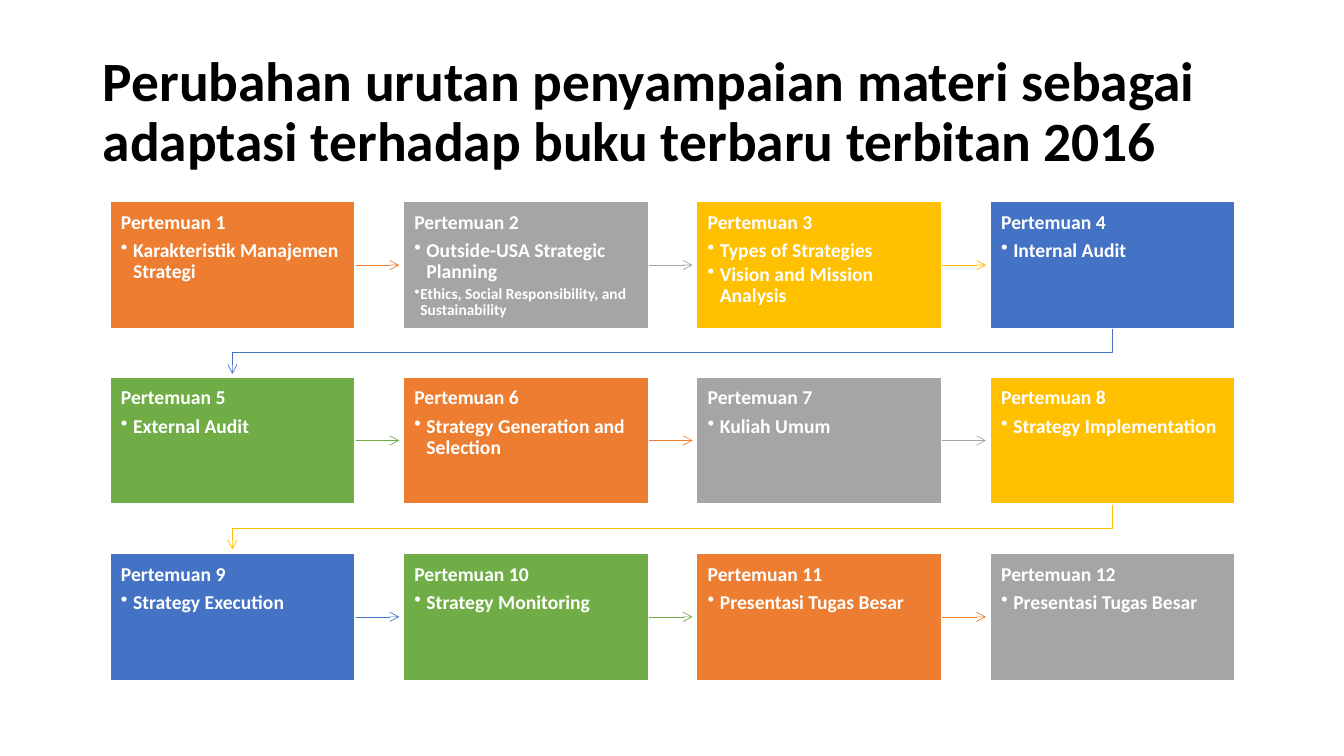
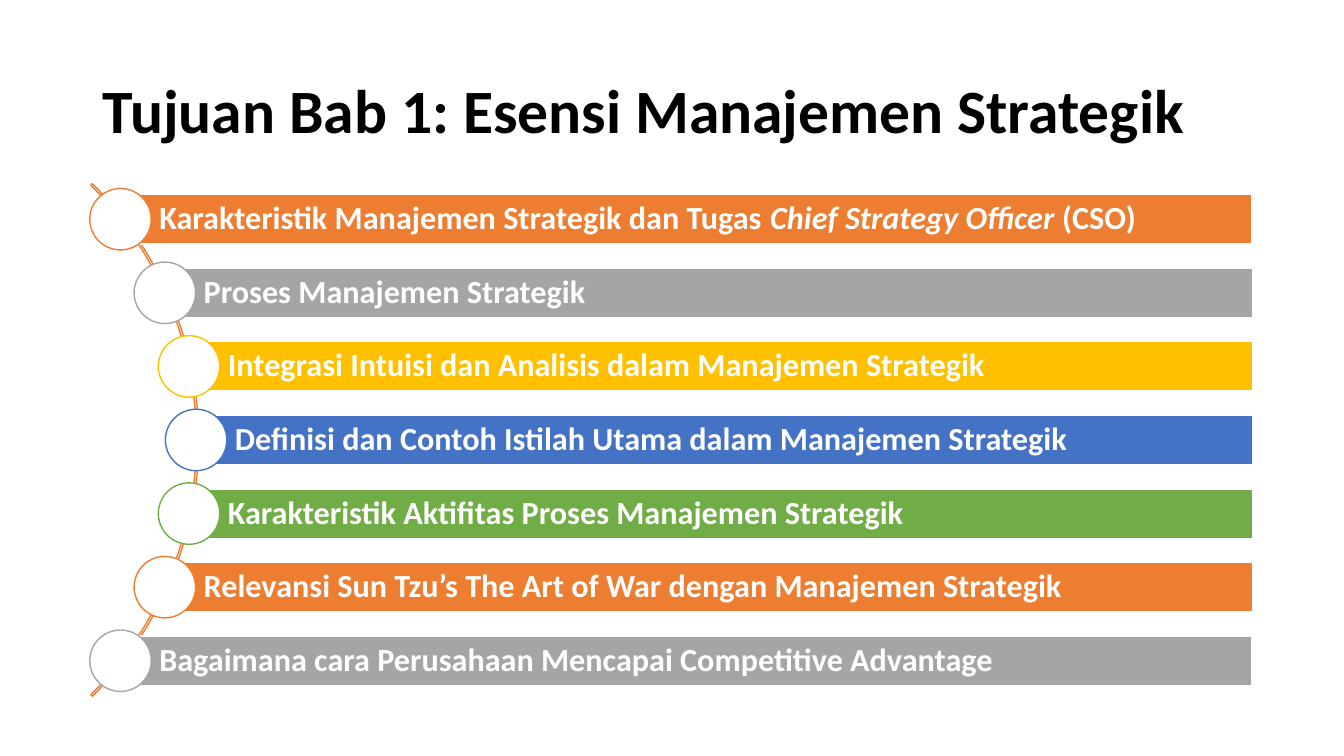
import dataclasses
import functools
import itertools
import math
import typing

import lxml.etree
import pptx
import pptx.dml.color
import pptx.enum.shapes
import pptx.enum.text
import pptx.oxml.ns
import pptx.util

EMU_PER_PX = 9144
FONT = "Calibri"
COLORS = {
    "orange": "ED7D31",
    "gray": "A5A5A5",
    "gold": "FFC000",
    "blue": "4472C4",
    "green": "70AD47",
    "white": "FFFFFF",
    "black": "000000",
}
ACCENTS = ("orange", "gray", "gold", "blue", "green")
SHAPE = pptx.enum.shapes.MSO_SHAPE
ANCHOR = pptx.enum.text.MSO_ANCHOR

GRID_COLUMNS = 4
GRID_LEFT, GRID_TOP, GRID_BOTTOM = 109, 200, 675
CARD_WIDTH, CARD_HEIGHT, CARD_PITCH = 243, 126, 291
ARROW_LENGTH, ELBOW_DROP = 45, 24

ARC_LEFT, ARC_TOP, ARC_SIZE = -522, 77, 719
ARC_ADJUSTMENTS = (189, 27, 0.003)
TRACK_RADIUS = 357
BAR_TOP, BAR_HEIGHT, BAR_PITCH, BAR_RIGHT = 193, 49, 73, 1242
DOT_SIZE = 61


class Area(typing.NamedTuple):
    left: int
    top: int
    width: int
    height: int


class Bullet(typing.NamedTuple):
    text: str
    size: float = 14
    indent: int = 12


class Span(typing.NamedTuple):
    text: str
    italic: bool = False


@dataclasses.dataclass(frozen=True)
class Meeting:
    bullets: tuple[Bullet, ...]


@dataclasses.dataclass(frozen=True)
class Goal:
    spans: tuple[Span, ...]


TITLE_AREA = Area(92, 40, 1150, 145)

MEETINGS = (
    Meeting((Bullet("Karakteristik Manajemen Strategi"),)),
    Meeting((
        Bullet("Outside-USA Strategic Planning"),
        Bullet("Ethics, Social Responsibility, and Sustainability", 11, 6),
    )),
    Meeting((Bullet("Types of Strategies"), Bullet("Vision and Mission Analysis"))),
    Meeting((Bullet("Internal Audit"),)),
    Meeting((Bullet("External Audit"),)),
    Meeting((Bullet("Strategy Generation and Selection"),)),
    Meeting((Bullet("Kuliah Umum"),)),
    Meeting((Bullet("Strategy Implementation"),)),
    Meeting((Bullet("Strategy Execution"),)),
    Meeting((Bullet("Strategy Monitoring"),)),
    Meeting((Bullet("Presentasi Tugas Besar"),)),
    Meeting((Bullet("Presentasi Tugas Besar"),)),
)

GOALS = (
    Goal((
        Span("Karakteristik Manajemen Strategik dan Tugas "),
        Span("Chief Strategy Officer ", italic=True),
        Span("(CSO)"),
    )),
    Goal((Span("Proses Manajemen Strategik"),)),
    Goal((Span("Integrasi Intuisi dan Analisis dalam Manajemen Strategik"),)),
    Goal((Span("Definisi dan Contoh Istilah Utama dalam Manajemen Strategik"),)),
    Goal((Span("Karakteristik Aktifitas Proses Manajemen Strategik"),)),
    Goal((Span("Relevansi Sun Tzu’s The Art of War dengan Manajemen Strategik"),)),
    Goal((Span("Bagaimana cara Perusahaan Mencapai Competitive Advantage"),)),
)


def px(length: float) -> pptx.util.Emu:
    return pptx.util.Emu(round(length * EMU_PER_PX))


@functools.cache
def rgb(name: str) -> pptx.dml.color.RGBColor:
    return pptx.dml.color.RGBColor.from_string(COLORS[name])


def add_span(para, text: str, *, size: float, color: str = "white",
             bold: bool = True, italic: bool = False) -> None:
    span = para.add_run()
    span.text = text
    span.font.name = FONT
    span.font.size = pptx.util.Pt(size)
    span.font.bold = bold
    span.font.italic = italic
    span.font.color.rgb = rgb(color)


def format_para(para, space_after: float = 0) -> None:
    para.alignment = pptx.enum.text.PP_ALIGN.LEFT
    para.line_spacing = 0.9
    para.space_after = pptx.util.Pt(space_after)


def set_bullet(para, indent: int) -> None:
    properties = para._p.get_or_add_pPr()
    properties.set("marL", str(px(indent)))
    properties.set("indent", str(-px(indent)))
    bullet = lxml.etree.SubElement(properties, pptx.oxml.ns.qn("a:buChar"))
    bullet.set("char", "•")


def prepare_frame(box, anchor, left: int, other: int):
    frame = box.text_frame
    frame.word_wrap = True
    frame.auto_size = pptx.enum.text.MSO_AUTO_SIZE.NONE
    frame.vertical_anchor = anchor
    frame.margin_left = px(left)
    frame.margin_top = frame.margin_right = frame.margin_bottom = px(other)
    return frame


def add_box(page, kind, area: Area, fill: str | None, line: str):
    box = page.shapes.add_shape(kind, *map(px, area))
    box.shadow.inherit = False
    if fill is None:
        box.fill.background()
    else:
        box.fill.solid()
        box.fill.fore_color.rgb = rgb(fill)
    box.line.color.rgb = rgb(line)
    box.line.width = pptx.util.Pt(1)
    return box


def style_arrow(arrow, color: str) -> None:
    arrow.line.color.rgb = rgb(color)
    arrow.line.width = pptx.util.Pt(0.5)
    properties = arrow.element.spPr
    line = properties.find(pptx.oxml.ns.qn("a:ln"))
    lxml.etree.SubElement(line, pptx.oxml.ns.qn("a:tailEnd")).set("type", "arrow")
    lxml.etree.SubElement(properties, pptx.oxml.ns.qn("a:effectLst"))


def add_straight_arrow(page, area: Area, color: str) -> None:
    start = area.left + area.width - 1
    middle = area.top + area.height / 2
    arrow = page.shapes.add_connector(
        pptx.enum.shapes.MSO_CONNECTOR.STRAIGHT,
        px(start), px(middle), px(start + ARROW_LENGTH), px(middle))
    style_arrow(arrow, color)


def add_return_arrow(page, area: Area, color: str) -> None:
    start = area.left + area.width / 2
    end = GRID_LEFT + CARD_WIDTH / 2
    bottom = area.top + area.height
    turn = bottom + ELBOW_DROP
    builder = page.shapes.build_freeform(px(start), px(bottom))
    points = ((start, turn), (end, turn), (end, bottom + ARROW_LENGTH))
    builder.add_line_segments([(px(x), px(y)) for x, y in points], close=False)
    arrow = builder.convert_to_shape()
    arrow.fill.background()
    style_arrow(arrow, color)


def add_page(deck, title: str, size: float):
    page = deck.slides.add_slide(deck.slide_layouts[5])
    box = page.shapes.title
    box.left, box.top, box.width, box.height = map(px, TITLE_AREA)
    para = prepare_frame(box, ANCHOR.MIDDLE, 10, 5).paragraphs[0]
    format_para(para)
    add_span(para, title, size=size, color="black")
    return page


def add_meeting(page, index: int, meeting: Meeting, color: str) -> None:
    row, column = divmod(index, GRID_COLUMNS)
    last_row = (len(MEETINGS) - 1) // GRID_COLUMNS
    drop = GRID_BOTTOM - CARD_HEIGHT - GRID_TOP
    area = Area(GRID_LEFT + column * CARD_PITCH, GRID_TOP + row * drop // last_row,
                CARD_WIDTH, CARD_HEIGHT)
    if column < GRID_COLUMNS - 1:
        add_straight_arrow(page, area, color)
    elif row < last_row:
        add_return_arrow(page, area, color)
    box = add_box(page, SHAPE.RECTANGLE, area, color, "white")
    frame = prepare_frame(box, ANCHOR.TOP, 11, 11)
    heading = frame.paragraphs[0]
    format_para(heading, 5)
    add_span(heading, f"Pertemuan {index + 1}", size=14)
    for bullet in meeting.bullets:
        para = frame.add_paragraph()
        para.level = 1
        format_para(para, 2)
        set_bullet(para, bullet.indent)
        add_span(para, bullet.text, size=bullet.size)


def add_goal(page, index: int, goal: Goal, color: str) -> None:
    top = BAR_TOP + index * BAR_PITCH
    offset = (index - (len(GOALS) - 1) / 2) * BAR_PITCH
    reach = math.sqrt(TRACK_RADIUS ** 2 - offset ** 2)
    left = round(ARC_LEFT + ARC_SIZE / 2 + reach)
    bar = add_box(page, SHAPE.RECTANGLE,
                  Area(left, top, BAR_RIGHT - left, BAR_HEIGHT), color, "white")
    para = prepare_frame(bar, ANCHOR.MIDDLE, 39, 6).paragraphs[0]
    format_para(para)
    for span in goal.spans:
        add_span(para, span.text, size=23, italic=span.italic)
    dot = Area(left - DOT_SIZE // 2, top - (DOT_SIZE - BAR_HEIGHT) // 2,
               DOT_SIZE, DOT_SIZE)
    add_box(page, SHAPE.OVAL, dot, "white", color)


def add_schedule_page(deck) -> None:
    page = add_page(deck, "Perubahan urutan penyampaian materi sebagai adaptasi "
                          "terhadap buku terbaru terbitan 2016", 39.6)
    for index, (meeting, color) in enumerate(zip(MEETINGS, itertools.cycle(ACCENTS))):
        add_meeting(page, index, meeting, color)


def add_goals_page(deck) -> None:
    page = add_page(deck, "Tujuan Bab 1: Esensi Manajemen Strategik", 44)
    arc = add_box(page, SHAPE.BLOCK_ARC,
                  Area(ARC_LEFT, ARC_TOP, ARC_SIZE, ARC_SIZE), None, "orange")
    for index, value in enumerate(ARC_ADJUSTMENTS):
        arc.adjustments[index] = value
    for index, (goal, color) in enumerate(zip(GOALS, itertools.cycle(ACCENTS))):
        add_goal(page, index, goal, color)


def main() -> None:
    deck = pptx.Presentation()
    deck.slide_width = pptx.util.Inches(13.33)
    deck.slide_height = pptx.util.Inches(7.5)
    add_schedule_page(deck)
    add_goals_page(deck)
    deck.save("out.pptx")


if __name__ == "__main__":
    main()
